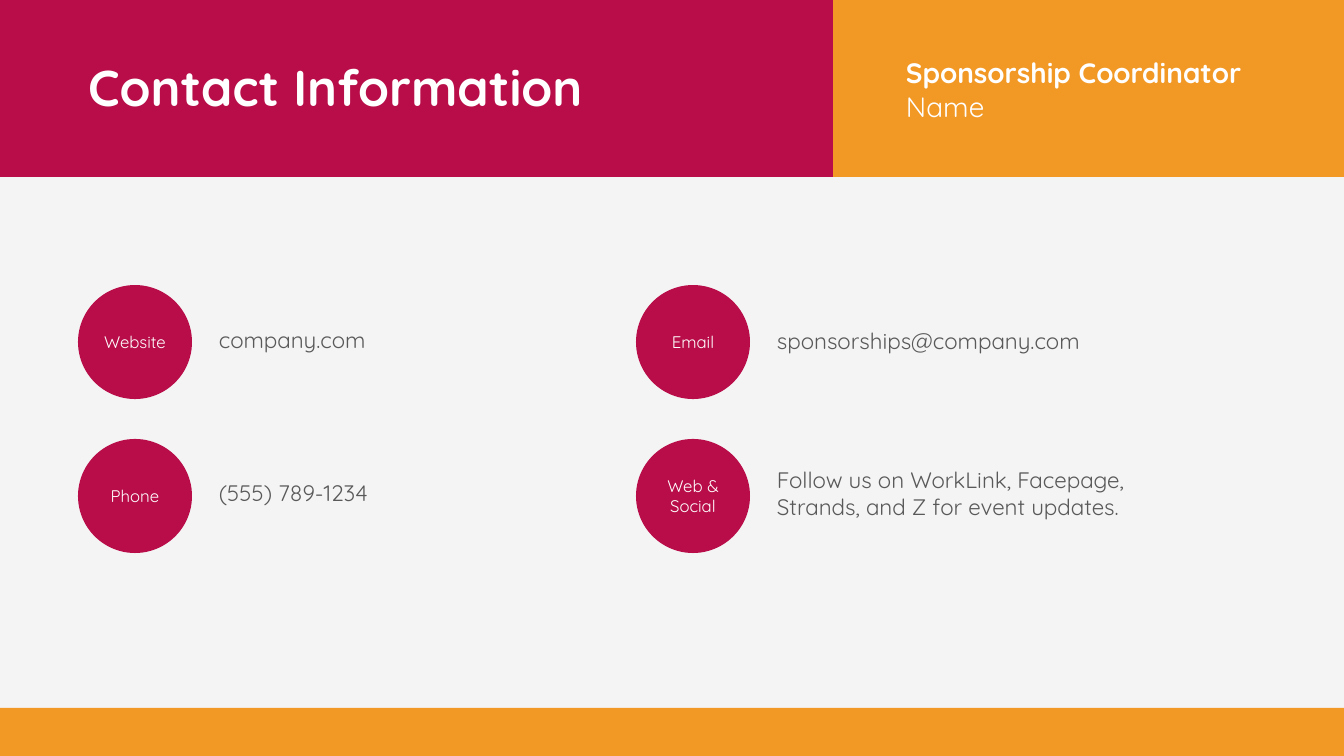
from dataclasses import dataclass

from pptx import Presentation
from pptx.dml.color import RGBColor as RGB
from pptx.enum.shapes import MSO_SHAPE as Shape
from pptx.enum.text import MSO_ANCHOR as Anchor, MSO_AUTO_SIZE as AutoSize, PP_ALIGN as Align
from pptx.util import Emu, Pt

EMU_PER_PX = 12192000 / 1344


@dataclass(frozen=True)
class Theme:
    font: str = "Quicksand"
    background: RGB = RGB(0xF4, 0xF4, 0xF4)
    crimson: RGB = RGB(0xB8, 0x0D, 0x48)
    orange: RGB = RGB(0xF2, 0x98, 0x24)
    white: RGB = RGB(0xFF, 0xFF, 0xFF)
    grey: RGB = RGB(0x59, 0x59, 0x59)
    title: int = 36
    coordinator: int = 20
    detail: int = 16
    badge: int = 12


THEME = Theme()

# Contact grid: badge diameter, column lefts and row tops
BADGE = 114
COLUMNS = (78, 636)
ROWS = (285, 439)
DETAIL_GAP = 131

# Column, row, badge label, detail text, detail top offset and size
CONTACTS = (
    (0, 0, "Website", "company.com", 36, 359, 37),
    (1, 0, "Email", "sponsorships@company.com", 37, 520, 37),
    (0, 1, "Phone", "(555) 789-1234", 35, 273, 37),
    (1, 1, "Web & Social",
     "Follow us on WorkLink, Facepage, Strands, and Z for event updates.", 22, 438, 65),
)


def px(n):
    return Emu(round(n * EMU_PER_PX))


def style(p, size, color, bold=False, align=Align.LEFT):
    p.alignment = align
    p.font.name = THEME.font
    p.font.size = Pt(size)
    p.font.bold = bold
    p.font.color.rgb = color


def add_block(slide, kind, x, y, w, h, color):
    sp = slide.shapes.add_shape(kind, px(x), px(y), px(w), px(h))
    sp.shadow.inherit = False
    sp.fill.solid()
    sp.fill.fore_color.rgb = color
    sp.line.fill.background()
    return sp


def add_badge(slide, x, y, label):
    sp = add_block(slide, Shape.OVAL, x, y, BADGE, BADGE, THEME.crimson)
    tf = sp.text_frame
    tf.word_wrap = True
    tf.vertical_anchor = Anchor.MIDDLE
    tf.margin_left = tf.margin_right = 0
    p = tf.paragraphs[0]
    p.text = label
    style(p, THEME.badge, THEME.white, align=Align.CENTER)


def add_text(slide, x, y, w, h, lines, size, color):
    """Add a text box from (text, bold) lines."""
    tf = slide.shapes.add_textbox(px(x), px(y), px(w), px(h)).text_frame
    tf.word_wrap = True
    for i, (text, bold) in enumerate(lines):
        p = tf.add_paragraph() if i else tf.paragraphs[0]
        p.text = text
        style(p, size, color, bold)


def set_title(slide, x, y, w, h, text):
    sp = slide.shapes.title
    sp.left, sp.top, sp.width, sp.height = px(x), px(y), px(w), px(h)
    tf = sp.text_frame
    tf.auto_size = AutoSize.NONE
    tf.vertical_anchor = Anchor.TOP
    p = tf.paragraphs[0]
    p.text = text
    style(p, THEME.title, THEME.white, bold=True)
    # Bring the title in front of the header band
    slide.shapes.element.append(sp.element)


def main():
    prs = Presentation()
    prs.slide_width, prs.slide_height = px(1344), px(756)
    slide = prs.slides.add_slide(prs.slide_layouts[5])
    slide.background.fill.solid()
    slide.background.fill.fore_color.rgb = THEME.background

    # Header and footer bands
    add_block(slide, Shape.RECTANGLE, 833, -1, 511, 178, THEME.orange)
    add_block(slide, Shape.RECTANGLE, 0, -1, 833, 178, THEME.crimson)
    add_block(slide, Shape.RECTANGLE, 0, 708, 1344, 48, THEME.orange)

    # Header text
    set_title(slide, 78, 51, 571, 72, "Contact Information")
    add_text(slide, 896, 51, 397, 78,
             [("Sponsorship Coordinator", True), ("Name", False)],
             THEME.coordinator, THEME.white)

    # Contact details
    for col, row, label, detail, dy, w, h in CONTACTS:
        x, y = COLUMNS[col], ROWS[row]
        add_badge(slide, x, y, label)
        add_text(slide, x + DETAIL_GAP, y + dy, w, h, [(detail, False)],
                 THEME.detail, THEME.grey)

    prs.save("out.pptx")


if __name__ == "__main__":
    main()
